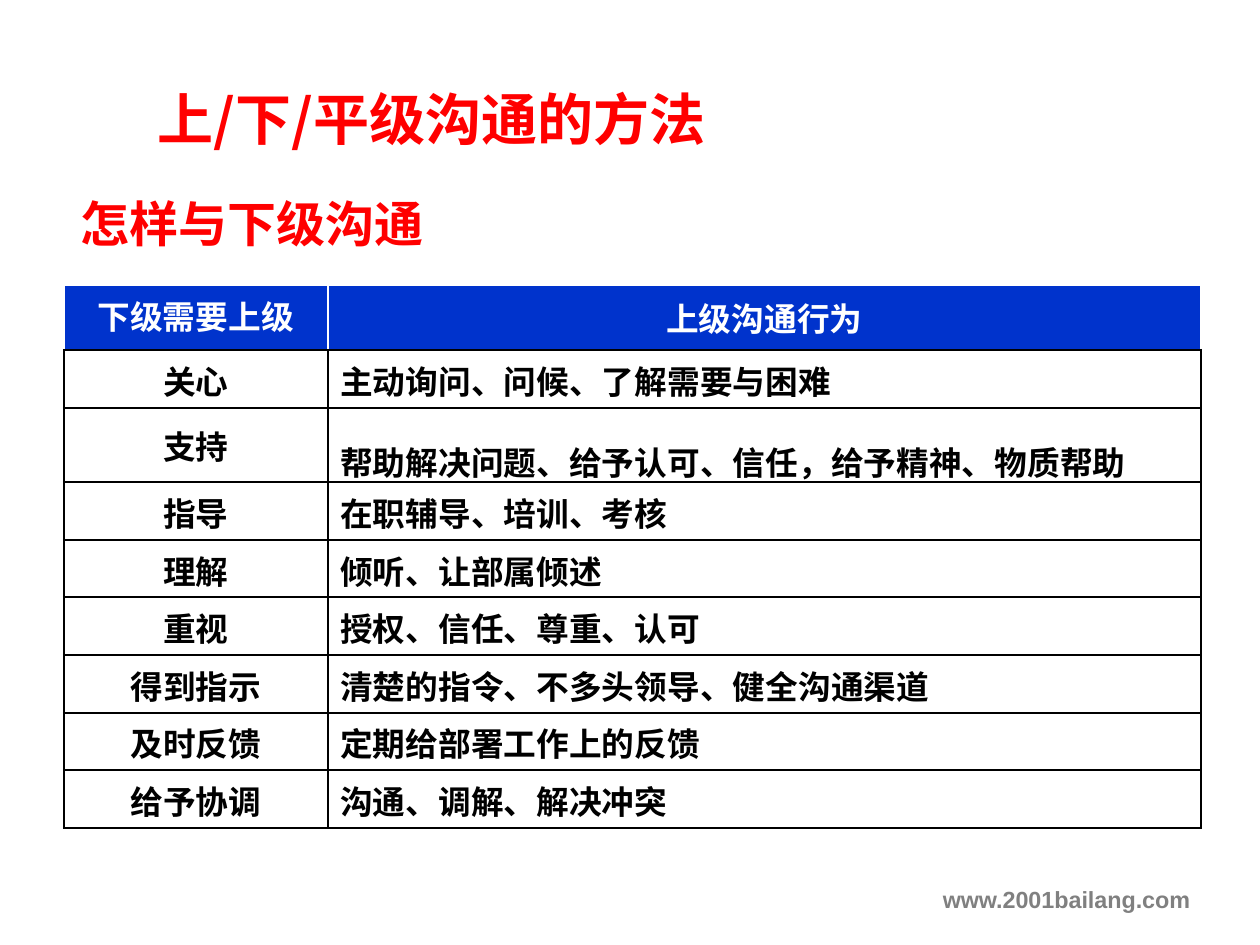
from lxml.etree import SubElement
from pptx import Presentation
from pptx.dml.color import RGBColor
from pptx.enum.text import MSO_ANCHOR, MSO_AUTO_SIZE, PP_ALIGN
from pptx.oxml.ns import qn
from pptx.util import Pt

RED = RGBColor(0xFF, 0, 0)
BLUE = RGBColor(0, 0x33, 0xCC)
WHITE = RGBColor(0xFF, 0xFF, 0xFF)
BLACK = RGBColor(0, 0, 0)
GREY = RGBColor(0x80, 0x80, 0x80)
CJK = "Noto Sans CJK SC"

HEADER = ("下级需要上级", "上级沟通行为")
NEEDS = [
    ("关心", "主动询问、问候、了解需要与困难"),
    ("支持", "帮助解决问题、给予认可、信任，给予精神、物质帮助"),
    ("指导", "在职辅导、培训、考核"),
    ("理解", "倾听、让部属倾述"),
    ("重视", "授权、信任、尊重、认可"),
    ("得到指示", "清楚的指令、不多头领导、健全沟通渠道"),
    ("及时反馈", "定期给部署工作上的反馈"),
    ("给予协调", "沟通、调解、解决冲突"),
]
TALL_ROW = 2


def write(tf, text, size=14, color=BLACK, font=CJK, align=PP_ALIGN.LEFT, spacing=None):
    p = tf.paragraphs[0]
    p.alignment = align
    if spacing:
        p.line_spacing = spacing
    r = p.add_run()
    r.text = text
    r.font.size = Pt(size)
    r.font.bold = True
    r.font.color.rgb = color
    r.font.name = font
    SubElement(r.font._element, qn("a:ea"), typeface=font)


def add_title(s, left, top, width, height):
    title = s.shapes.title
    title.left, title.top, title.width, title.height = map(Pt, (left, top, width, height))
    tf = title.text_frame
    tf.auto_size = MSO_AUTO_SIZE.NONE
    tf.vertical_anchor = MSO_ANCHOR.TOP
    write(tf, "上/下/平级沟通的方法", size=24, color=RED)


def add_text(s, left, top, width, height, text, wrap=True, **fmt):
    tf = s.shapes.add_textbox(*map(Pt, (left, top, width, height))).text_frame
    tf.word_wrap = wrap
    write(tf, text, **fmt)


def set_borders(cell, **colors):
    tcPr = cell._tc.get_or_add_tcPr()
    for side in "LRTB":
        ln = SubElement(tcPr, qn(f"a:ln{side}"), w=str(Pt(1)))
        fill = SubElement(ln, qn("a:solidFill"))
        SubElement(fill, qn("a:srgbClr"), val=str(colors.get(side, BLACK)))


def format_cell(cell, row, col, text):
    cell.margin_left = cell.margin_right = Pt(5.4)
    cell.margin_top = cell.margin_bottom = Pt(2.7)
    header = row == 0
    if header:
        set_borders(cell, L=WHITE, R=WHITE, T=WHITE)
        cell.fill.solid()
        cell.fill.fore_color.rgb = BLUE
    else:
        set_borders(cell)
        cell.fill.background()
    centred = header or col == 0
    middle = header != (col == 0)
    cell.vertical_anchor = MSO_ANCHOR.MIDDLE if middle else MSO_ANCHOR.TOP
    write(cell.text_frame, text,
          color=WHITE if header else BLACK,
          align=PP_ALIGN.CENTER if centred else PP_ALIGN.LEFT,
          spacing=1.5 if (row, col) == (TALL_ROW, 1) else None)


def add_needs_table(s, left, top, width, height):
    rows = [HEADER] + NEEDS
    table = s.shapes.add_table(len(rows), 2, *map(Pt, (left, top, width, height))).table
    table.first_row = table.horz_banding = False
    need_width, header_height, tall_height = 113, 28, 32
    table.columns[0].width = Pt(need_width)
    table.columns[1].width = Pt(width - need_width)
    row_height = (height - header_height - tall_height) / (len(rows) - 2)
    heights = {0: header_height, TALL_ROW: tall_height}
    for i, texts in enumerate(rows):
        table.rows[i].height = Pt(heights.get(i, row_height))
        for j, text in enumerate(texts):
            format_cell(table.cell(i, j), i, j, text)


def main():
    prs = Presentation()
    prs.slide_width, prs.slide_height = Pt(540), Pt(405)
    s = prs.slides.add_slide(prs.slide_layouts[5])
    add_title(s, 60.5, 32.4, 312, 36.7)
    add_text(s, 27.4, 79.2, 162.7, 32.4, "怎样与下级沟通", wrap=False, size=21, color=RED)
    add_needs_table(s, 27.4, 122, 487.5, 233)
    add_text(s, 0, 375.8, 517, 18.7, "www.2001bailang.com",
             size=10, color=GREY, font="Arial", align=PP_ALIGN.RIGHT)
    prs.save("out.pptx")


if __name__ == "__main__":
    main()
